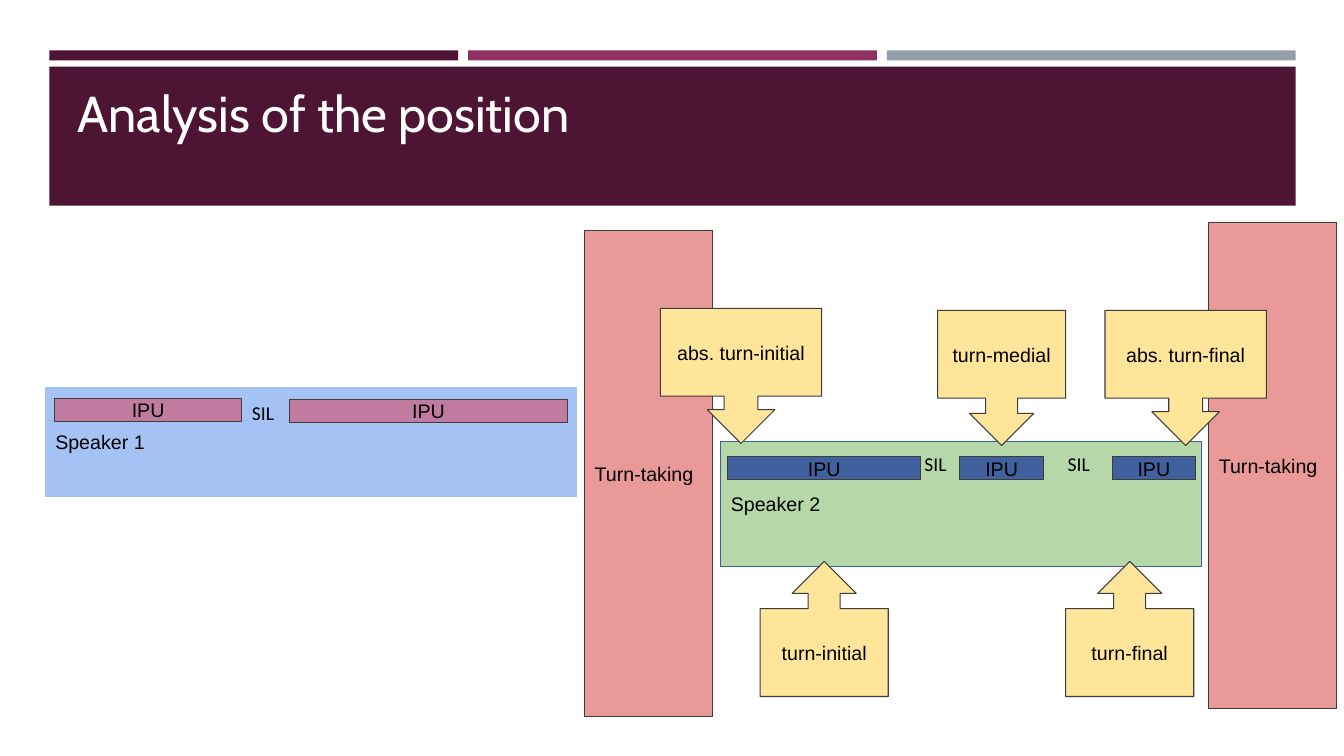
import pptx
import pptx.util
import pptx.dml.color
import pptx.enum.shapes
import pptx.enum.text

Inches = pptx.util.Inches
RGBColor = pptx.dml.color.RGBColor
SHAPE = pptx.enum.shapes.MSO_SHAPE
ALIGN = pptx.enum.text.PP_ALIGN
ANCHOR = pptx.enum.text.MSO_ANCHOR

PLUM = RGBColor(0x4D, 0x14, 0x34)
MAGENTA = RGBColor(0x90, 0x31, 0x63)
GREY = RGBColor(0x96, 0x9F, 0xA7)
WHITE = RGBColor(0xFF, 0xFF, 0xFF)
BLACK = RGBColor(0x00, 0x00, 0x00)
OUTLINE = RGBColor(0x3D, 0x3D, 0x3D)
SALMON = RGBColor(0xEA, 0x99, 0x99)
GREEN = RGBColor(0xB6, 0xD7, 0xA8)
LIGHT_BLUE = RGBColor(0xA4, 0xC2, 0xF4)
BLUE = RGBColor(0x40, 0x61, 0x9D)
PINK = RGBColor(0xC2, 0x7B, 0xA0)
YELLOW = RGBColor(0xFF, 0xE5, 0x99)

IPU_HEIGHT = 0.23
CALLOUT_HEIGHT = 1.34


def write_text(shape, text, font_name="Arial", size=14, color=BLACK,
               alignment=ALIGN.LEFT, anchor=ANCHOR.MIDDLE, vertical_margin=0.1):
    frame = shape.text_frame
    frame.word_wrap = True
    frame.vertical_anchor = anchor
    frame.margin_left = frame.margin_right = Inches(0.1)
    frame.margin_top = frame.margin_bottom = Inches(vertical_margin)
    frame.text = text
    paragraph = frame.paragraphs[0]
    paragraph.alignment = alignment
    font = paragraph.runs[0].font
    font.name = font_name
    font.size = pptx.util.Pt(size)
    font.color.rgb = color


def add_block(slide, box, fill, line=None, text="", alignment=ALIGN.LEFT,
              kind=SHAPE.RECTANGLE):
    shape = slide.shapes.add_shape(kind, *map(Inches, box))
    shape.shadow.inherit = False
    shape.fill.solid()
    shape.fill.fore_color.rgb = fill
    if line is None:
        shape.line.fill.background()
    else:
        shape.line.color.rgb = line
        shape.line.width = pptx.util.Pt(0.75)
    if text:
        write_text(shape, text, alignment=alignment)
    return shape


def add_header(slide, box, title_text):
    """Three colour strips over a band that carries the title."""
    left, top, width, height = box
    gap, strip_height, band_offset = 0.1, 0.1, 0.16
    strip_width = (width - 2 * gap) / 3
    for index, color in enumerate((PLUM, MAGENTA, GREY)):
        strip_left = left + index * (strip_width + gap)
        add_block(slide, (strip_left, top, strip_width, strip_height), color)
    band = add_block(slide, (left, top + band_offset, width, height - band_offset), PLUM)

    title = slide.shapes.title
    title.left, title.top = Inches(left + 0.18), Inches(top + 0.32)
    title.width, title.height = Inches(11.5), Inches(0.64)
    write_text(title, title_text, "Cabin", 36, WHITE,
               anchor=ANCHOR.BOTTOM, vertical_margin=0.05)
    title.text_frame.auto_size = pptx.enum.text.MSO_AUTO_SIZE.NONE
    band.element.addnext(title.element)


def add_turn_taking(slide, left, top):
    add_block(slide, (left, top, 1.27, 4.82), SALMON, OUTLINE, "Turn-taking")


def add_speaker(slide, box, name, fill, line, ipu_fill, ipus, silences):
    """ipus are (left, top, width) and silences (left, top), measured from the box."""
    left, top = box[:2]
    add_block(slide, box, fill, line, name)
    for ipu_left, ipu_top, ipu_width in ipus:
        add_block(slide, (left + ipu_left, top + ipu_top, ipu_width, IPU_HEIGHT),
                  ipu_fill, OUTLINE, "IPU", ALIGN.CENTER)
    for silence_left, silence_top in silences:
        label = slide.shapes.add_textbox(Inches(left + silence_left),
                                         Inches(top + silence_top),
                                         Inches(0.47), Inches(0.44))
        write_text(label, "SIL", "Calibri", anchor=ANCHOR.TOP)


def add_callout(slide, left, top, width, text, kind):
    callout = add_block(slide, (left, top, width, CALLOUT_HEIGHT), YELLOW, OUTLINE,
                        text, ALIGN.CENTER, kind)
    for index, value in enumerate((0.25, 0.25, 0.25, 0.65)):
        callout.adjustments[index] = value


def add_position_callouts(slide, box):
    """Callouts that point at the speaker box from above and below."""
    left, top, width, height = box
    down, up = SHAPE.DOWN_ARROW_CALLOUT, SHAPE.UP_ARROW_CALLOUT
    above = top + 0.04 - CALLOUT_HEIGHT
    below = top + height - 0.05
    for offset, callout_top, callout_width, text, kind in (
        (-0.6, above - 0.02, 1.6, "abs. turn-initial", down),
        (2.15, above, 1.27, "turn-medial", down),
        (3.81, above, 1.6, "abs. turn-final", down),
        (0.39, below, 1.27, "turn-initial", up),
        (3.42, below, 1.27, "turn-final", up),
    ):
        add_callout(slide, left + offset, callout_top, callout_width, text, kind)


def build_position_slide(presentation):
    slide = presentation.slides.add_slide(presentation.slide_layouts[5])
    add_header(slide, (0.49, 0.5, 12.36, 1.54), "Analysis of the position")
    add_turn_taking(slide, 5.8, 2.29)
    add_turn_taking(slide, 11.99, 2.21)
    add_speaker(slide, (0.45, 3.84, 5.27, 1.09), "Speaker 1", LIGHT_BLUE, LIGHT_BLUE, PINK,
                ipus=((0.09, 0.11, 1.86), (2.42, 0.12, 2.76)),
                silences=((1.95, 0.04),))
    second_speaker = (7.15, 4.38, 4.77, 1.24)
    add_speaker(slide, second_speaker, "Speaker 2", GREEN, BLUE, BLUE,
                ipus=((0.07, 0.15, 1.91), (2.37, 0.15, 0.83), (3.88, 0.15, 0.83)),
                silences=((1.92, 0), (3.34, 0)))
    add_position_callouts(slide, second_speaker)


def main():
    presentation = pptx.Presentation()
    presentation.slide_width = Inches(13.33)
    presentation.slide_height = Inches(7.5)
    build_position_slide(presentation)
    presentation.save("out.pptx")


if __name__ == "__main__":
    main()
